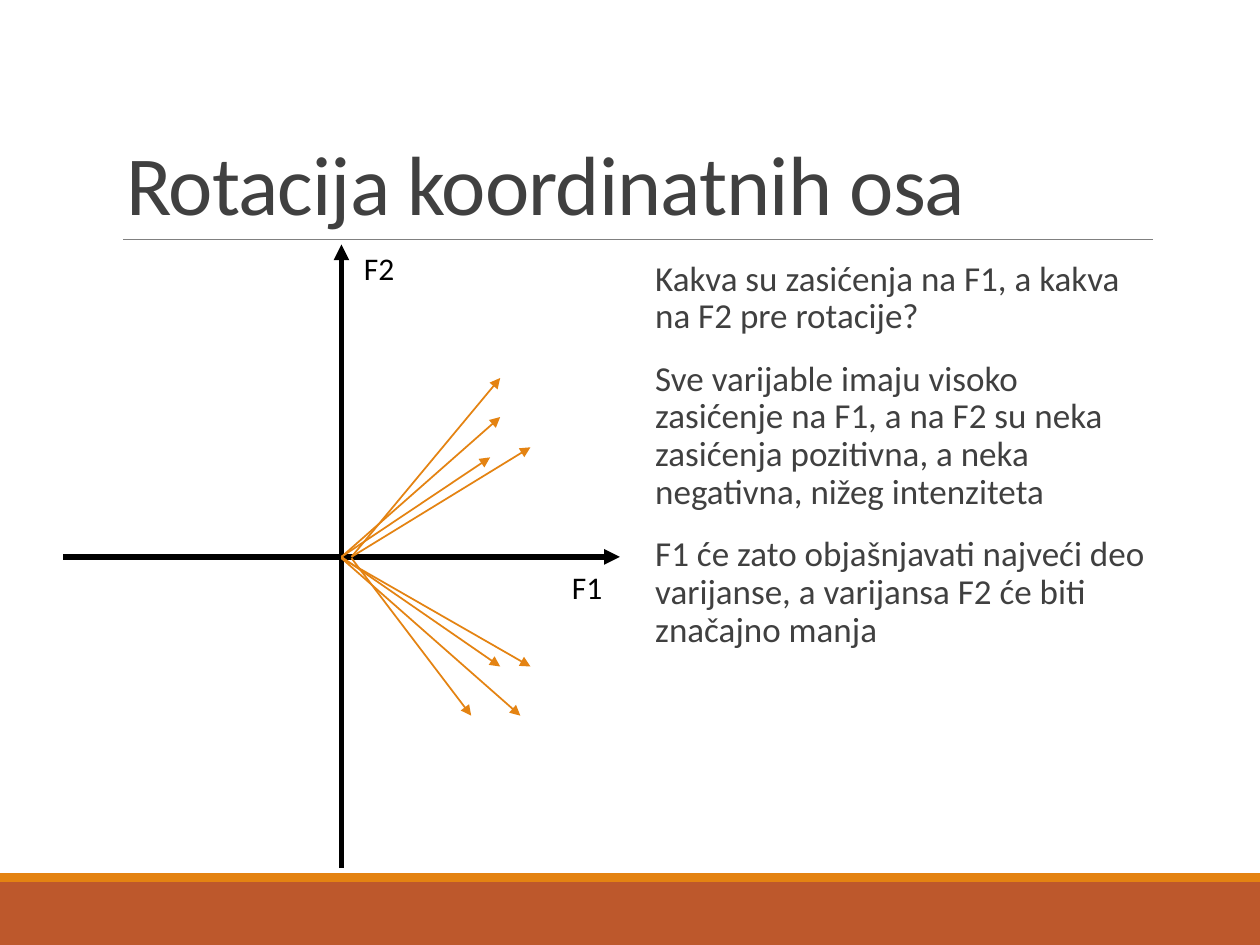
"""Build a slide on factor loadings before the rotation of the axes."""
from lxml import etree
from pptx import Presentation
from pptx import util as u
from pptx.dml.color import RGBColor
from pptx.enum import shapes, text
from pptx.oxml.ns import qn

HUES = {"ink": "404040", "black": "000000", "rule": "808080",
        "gold": "E48312", "rust": "BD582C"}
FONT = "Calibri"
ORIGIN = (2.71, 4.42)
STARTS = {"axis": ORIGIN, "low": (2.71, 4.43),
          "right": (2.79, 4.42), "both": (2.79, 4.43)}
LOADS = [("axis", (3.89, 3.63)), ("axis", (3.97, 3.31)),
         ("low", (4.21, 5.29)), ("right", (4.21, 3.55)),
         ("axis", (3.97, 5.29)), ("both", (3.74, 5.68)),
         ("right", (3.97, 3)), ("low", (4.13, 5.68))]
POINTS = [
    "Kakva su zasićenja na F1, a kakva na F2 pre rotacije?",
    "Sve varijable imaju visoko zasićenje na F1, a na F2 su neka "
    "zasićenja pozitivna, a neka negativna, nižeg intenziteta",
    "F1 će zato objašnjavati najveći deo varijanse, a varijansa F2 "
    "će biti značajno manja",
]


def hue(name):
    return RGBColor.from_string(HUES[name])


def write(para, words, size=18, color="black", line=None, before=0, after=0,
          track=None):
    """Fill a paragraph with one formatted run."""
    run = para.add_run()
    run.text = words
    run.font.name = FONT
    run.font.size = u.Pt(size)
    run.font.color.rgb = hue(color)
    para.alignment = text.PP_ALIGN.LEFT
    para.line_spacing = line
    para.space_before, para.space_after = u.Pt(before), u.Pt(after)
    if track is not None:
        run.font._element.set("spc", str(int(track * 100)))


class Deck:
    """Hold the style and the current slide."""

    def __init__(self):
        self.prs = Presentation()
        self.prs.slide_width, self.prs.slide_height = u.Inches(10), u.Inches(7.5)
        self.slide = self.prs.slides.add_slide(self.prs.slide_layouts[1])

    def place(self, holder, box):
        holder.left, holder.top, holder.width, holder.height = map(u.Inches, box)
        frame = holder.text_frame
        frame.word_wrap = True
        frame.auto_size = text.MSO_AUTO_SIZE.NONE
        return frame

    def title(self, words, box):
        frame = self.place(self.slide.shapes.title, box)
        frame.vertical_anchor = text.MSO_ANCHOR.BOTTOM
        write(frame.paragraphs[0], words, size=48, color="ink", line=0.85,
              track=-0.5)

    def body(self, items, box):
        frame = self.place(self.slide.placeholders[1], box)
        frame.margin_left = frame.margin_right = 0
        frame.vertical_anchor = text.MSO_ANCHOR.TOP
        for i, item in enumerate(items):
            para = frame.add_paragraph() if i else frame.paragraphs[0]
            write(para, item, size=20, color="ink", line=0.9, before=12, after=2)
            props = para._p.get_or_add_pPr()
            props.set("marL", str(u.Inches(0.1)))
            props.set("indent", str(-u.Inches(0.1)))
            etree.SubElement(props, qn("a:buChar")).set("char", " ")

    def band(self, box, color):
        shape = self.slide.shapes.add_shape(
            shapes.MSO_SHAPE.RECTANGLE, *map(u.Inches, box))
        shape.shadow.inherit = False
        shape.fill.solid()
        shape.fill.fore_color.rgb = hue(color)
        shape.line.fill.background()

    def line(self, start, end, color, width, arrow=True):
        link = self.slide.shapes.add_connector(
            shapes.MSO_CONNECTOR.STRAIGHT, *map(u.Inches, start + end))
        link.line.color.rgb = hue(color)
        link.line.width = u.Pt(width)
        if arrow:
            tail = etree.SubElement(link.line._get_or_add_ln(), qn("a:tailEnd"))
            tail.set("type", "triangle")
        etree.SubElement(link._element.spPr, qn("a:effectLst"))

    def label(self, words, left, top):
        box = self.slide.shapes.add_textbox(
            *map(u.Inches, (left, top, 0.45, 0.4)))
        box.text_frame.word_wrap = False
        box.text_frame.auto_size = text.MSO_AUTO_SIZE.SHAPE_TO_FIT_TEXT
        write(box.text_frame.paragraphs[0], words)


def main():
    deck = Deck()
    deck.band((0, 7, 10, 0.5), "rust")
    deck.band((0, 6.93, 10, 0.07), "gold")
    deck.line((0.98, 1.9), (9.15, 1.9), "rule", 0.5, arrow=False)
    deck.title("Rotacija koordinatnih osa", (0.9, 0.31, 8.25, 1.59))
    deck.body(POINTS, (5.1, 2.02, 4.05, 4.4))
    mid, level = ORIGIN
    deck.line((0.5, level), (4.92, level), "black", 3)
    deck.line((mid, 6.89), (mid, 1.94), "black", 3)
    for start, end in LOADS:
        deck.line(STARTS[start], end, "gold", 1)
    deck.label("F1", 4.44, 4.46)
    deck.label("F2", 2.79, 1.93)
    deck.prs.save("out.pptx")


if __name__ == "__main__":
    main()
